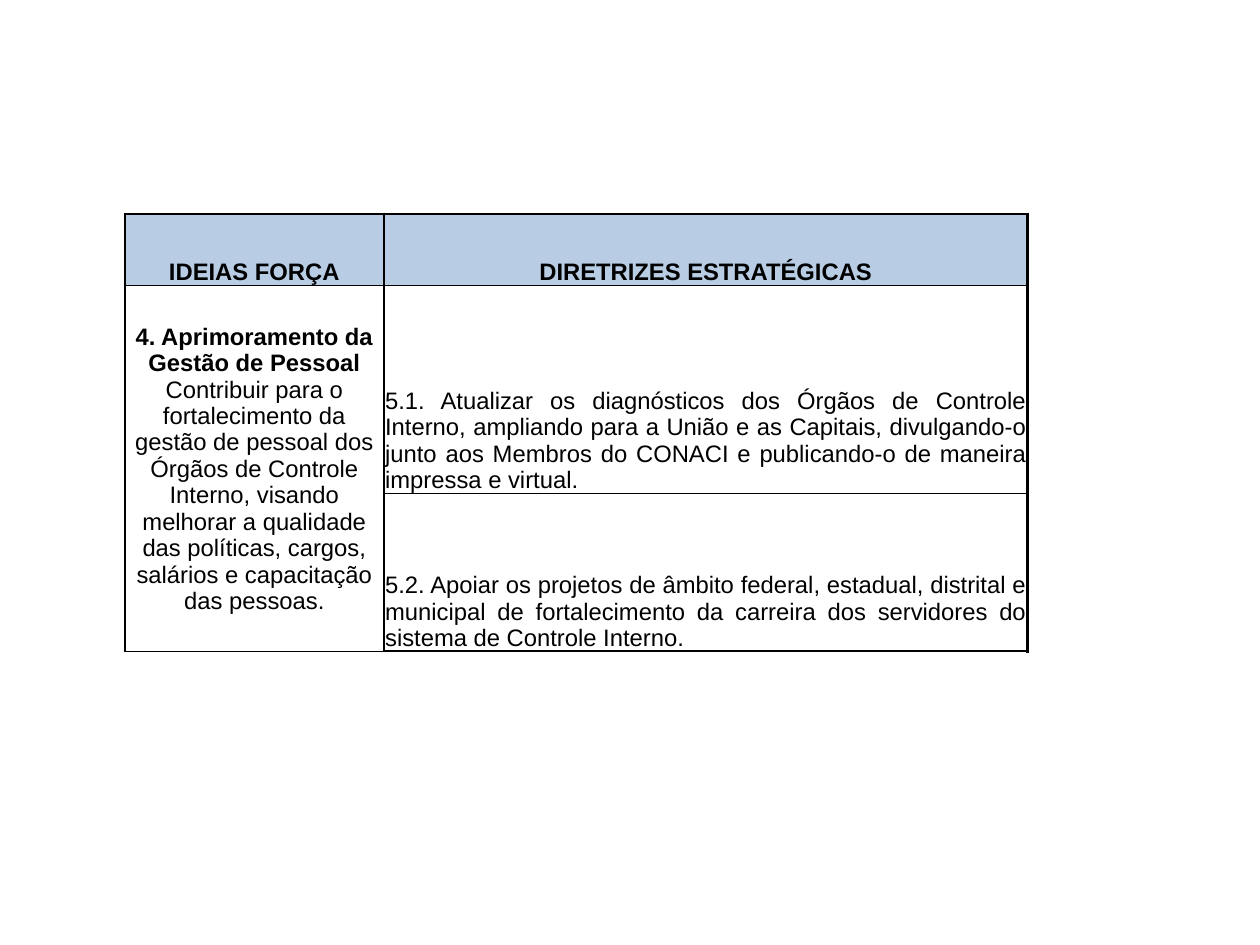
from lxml import etree
from pptx import Presentation
from pptx.dml.color import RGBColor
from pptx.enum.text import MSO_ANCHOR as ANCHOR, PP_ALIGN as ALIGN
from pptx.oxml.ns import qn
from pptx.util import Inches, Pt

CM_PER_INCH = 2.54
BLACK, HEADER_BLUE = "000000", "B8CCE4"
COL_WIDTHS = [2.27, 5.63]
ROW_HEIGHTS = [0.63, 1.82, 1.38]
HEADERS = ["IDEIAS FORÇA", "DIRETRIZES ESTRATÉGICAS"]
IDEA_TITLE = "4. Aprimoramento da Gestão de Pessoal"
IDEA_TEXT = ("Contribuir para o fortalecimento da gestão de pessoal dos Órgãos de "
             "Controle Interno, visando melhorar a qualidade das políticas, cargos, "
             "salários e capacitação das pessoas.")
GUIDELINES = [
    "5.1. Atualizar os diagnósticos dos Órgãos de Controle Interno, ampliando para a "
    "União e as Capitais, divulgando-o junto aos Membros do CONACI e publicando-o de "
    "maneira impressa e virtual.",
    "5.2. Apoiar os projetos de âmbito federal, estadual, distrital e municipal de "
    "fortalecimento da carreira dos servidores do sistema de Controle Interno.",
]


def color(hex_value):
    return RGBColor.from_string(hex_value)


def add_text(p, text, size=15, bold=False, font="Arial", fg=BLACK, align=ALIGN.CENTER):
    p.alignment = align
    r = p.add_run()
    r.text = text
    r.font.size, r.font.bold, r.font.name = Pt(size), bold, font
    r.font.color.rgb = color(fg)


def set_borders(cell, **widths):
    tc_pr = cell._tc.get_or_add_tcPr()
    for side in "LRTB":
        ln = etree.SubElement(tc_pr, qn(f"a:ln{side}"), w=str(Pt(widths[side])))
        fill = etree.SubElement(ln, qn("a:solidFill"))
        etree.SubElement(fill, qn("a:srgbClr"), val=BLACK)


def format_cell(cell, row):
    cell.margin_left = cell.margin_right = cell.margin_top = Inches(0.01)
    cell.margin_bottom = 0
    cell.vertical_anchor = ANCHOR.BOTTOM
    # Outer and vertical lines are thick, inner horizontal lines thin
    last = len(ROW_HEIGHTS) - 1
    set_borders(cell, L=1.5, R=1.5, T=1 if row else 1.5, B=1.5 if row == last else 1)
    if row == 0:
        cell.fill.solid()
        cell.fill.fore_color.rgb = color(HEADER_BLUE)
    else:
        cell.fill.background()


def add_guidelines_table(s, left, top, width, height):
    table = s.shapes.add_table(len(ROW_HEIGHTS), len(COL_WIDTHS), Inches(left),
                               Inches(top), Inches(width), Inches(height)).table
    table.first_row = table.horz_banding = False
    for column, share in zip(table.columns, COL_WIDTHS):
        column.width = Inches(width * share / sum(COL_WIDTHS))
    for row, share in zip(table.rows, ROW_HEIGHTS):
        row.height = Inches(height * share / sum(ROW_HEIGHTS))
    for row in range(len(ROW_HEIGHTS)):
        for col in range(len(COL_WIDTHS)):
            format_cell(table.cell(row, col), row)

    # Header row
    for col, header in enumerate(HEADERS):
        add_text(table.cell(0, col).text_frame.paragraphs[0], header, bold=True)

    # Key idea, spanning all guidelines
    idea = table.cell(1, 0)
    idea.merge(table.cell(len(GUIDELINES), 0))
    idea.vertical_anchor = ANCHOR.MIDDLE
    p = idea.text_frame.paragraphs[0]
    add_text(p, IDEA_TITLE, bold=True)
    p.add_line_break()
    add_text(p, IDEA_TEXT)

    # Guidelines
    for row, guideline in enumerate(GUIDELINES, 1):
        add_text(table.cell(row, 1).text_frame.paragraphs[0], guideline,
                 align=ALIGN.JUSTIFY)


def main():
    prs = Presentation()
    prs.slide_width = Inches(28 / CM_PER_INCH)
    prs.slide_height = Inches(21 / CM_PER_INCH)
    s = prs.slides.add_slide(prs.slide_layouts[6])
    add_guidelines_table(s, 1.09, 1.87, 7.9, 3.83)
    prs.save("out.pptx")


if __name__ == "__main__":
    main()
